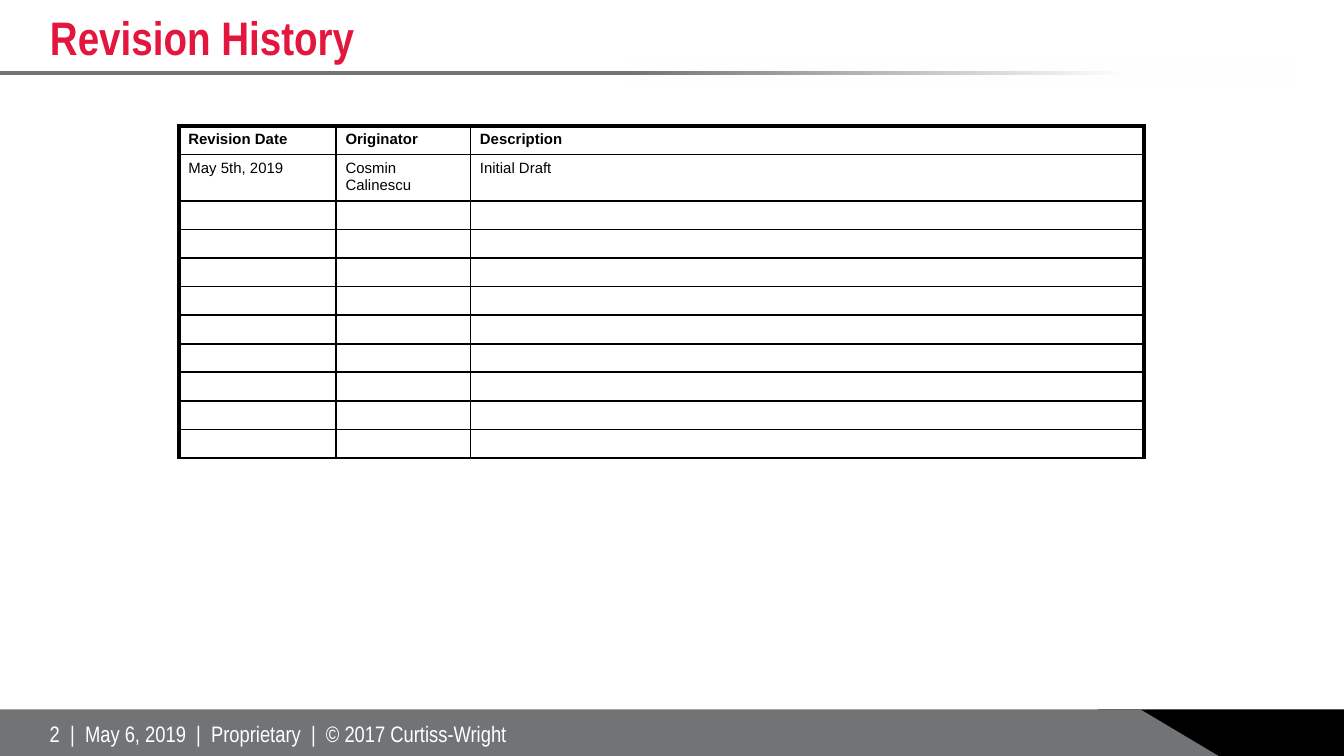
from lxml import etree
from pptx import Presentation
from pptx.dml.color import RGBColor
from pptx.enum.shapes import MSO_CONNECTOR, MSO_SHAPE
from pptx.enum.text import MSO_ANCHOR, PP_ALIGN
from pptx.oxml.ns import qn
from pptx.util import Cm, Pt

RECTANGLE = MSO_SHAPE.RECTANGLE
TRIANGLE = MSO_SHAPE.ISOSCELES_TRIANGLE
STRAIGHT = MSO_CONNECTOR.STRAIGHT
MIDDLE = MSO_ANCHOR.MIDDLE
TOP = MSO_ANCHOR.TOP
LEFT = PP_ALIGN.LEFT

RED = RGBColor(0xE3, 0x17, 0x3E)
GRAY = RGBColor(0x71, 0x73, 0x75)
BLACK = RGBColor(0, 0, 0)
WHITE = RGBColor(0xFF, 0xFF, 0xFF)


def add_block(preset, left, top, width, height, color):
    block = slide.shapes.add_shape(preset, Cm(left), Cm(top), Cm(width), Cm(height))
    block.shadow.inherit = False
    block.fill.solid()
    block.fill.fore_color.rgb = color
    block.line.fill.background()
    return block


def add_border(cell, side, points):
    """Draw a black line on one side of a cell: L, R, T or B."""
    line = etree.SubElement(cell._tc.get_or_add_tcPr(), qn(f"a:ln{side}"), w=str(Pt(points)))
    fill = etree.SubElement(line, qn("a:solidFill"))
    etree.SubElement(fill, qn("a:srgbClr"), val=str(BLACK))


prs = Presentation()
prs.slide_width, prs.slide_height = Cm(25.4), Cm(14.29)
slide = prs.slides.add_slide(prs.slide_layouts[5])

# Title
title = slide.shapes.title
title.left, title.top, title.width, title.height = Cm(0.69), Cm(0), Cm(24), Cm(1.4)
title.text_frame.text = "Revision History"
title.text_frame.vertical_anchor = MIDDLE
title_paragraph = title.text_frame.paragraphs[0]
title_paragraph.alignment = LEFT
title_font = title_paragraph.runs[0].font
title_font.name, title_font.size, title_font.bold = "Arial Narrow", Pt(25.2), True
title_font.color.rgb = RED

# Title rule, fading to white on the right
rule = slide.shapes.add_connector(STRAIGHT, Cm(0), Cm(1.38), Cm(24), Cm(1.38))
rule.line.color.rgb = GRAY
rule.line.width = Pt(2)
etree.SubElement(rule._element.spPr, qn("a:effectLst"))

fade = add_block(RECTANGLE, 11.91, 1.09, 12.6, 0.53, WHITE)
fade.fill.gradient()
fade.fill.gradient_angle = 180
for stop, position in zip(fade.fill.gradient_stops, (0.26, 1)):
    stop.color.rgb = WHITE
    stop.position = position
clear_color = fade._element.spPr.findall(".//" + qn("a:srgbClr"))[-1]
etree.SubElement(clear_color, qn("a:alpha"), val="0")

# Footer band
footer_top, footer_height = 13.41, 0.88
add_block(RECTANGLE, 20.75, footer_top, 4.65, footer_height, BLACK)
add_block(RECTANGLE, 0, footer_top, 21.56, footer_height, GRAY)
slant = add_block(TRIANGLE, 21.23, footer_top, 1.8, footer_height, GRAY)
slant.adjustments[0] = 0.18

footer = slide.shapes.add_textbox(Cm(0.69), Cm(13.49), Cm(10.52), Cm(0.76))
footer.text_frame.word_wrap = False
footer.text_frame.vertical_anchor = MIDDLE
footer.text_frame.text = "2  |  May 6, 2019  |  Proprietary  |  © 2017 Curtiss-Wright"
footer_paragraph = footer.text_frame.paragraphs[0]
footer_paragraph.alignment = LEFT
footer_font = footer_paragraph.runs[0].font
footer_font.name, footer_font.size = "Arial Narrow", Pt(12)
footer_font.color.rgb = WHITE

# Revision table
revisions = [
    ("Revision Date", "Originator", "Description"),
    ("May 5th, 2019", "Cosmin Calinescu", "Initial Draft"),
] + [("", "", "")] * 9
column_widths = (2.97, 2.54, 12.73)
row_height = 0.54

history = slide.shapes.add_table(
    len(revisions), len(column_widths),
    Cm(3.38), Cm(2.38), Cm(sum(column_widths)), Cm(row_height * len(revisions)),
).table
history.first_row = history.horz_banding = False
for column, width in zip(history.columns, column_widths):
    column.width = Cm(width)

last_column = len(column_widths) - 1
for r, revision in enumerate(revisions):
    history.rows[r].height = Cm(row_height)
    for c, entry in enumerate(revision):
        cell = history.cell(r, c)
        add_border(cell, "L", 2.25 if c == 0 else 1)
        add_border(cell, "R", 2.25 if c == last_column else 1)
        add_border(cell, "T", 2.25 if r == 0 else 1)
        add_border(cell, "B", 1)
        cell.fill.background()
        cell.margin_left = cell.margin_right = Cm(0.18)
        cell.margin_top = cell.margin_bottom = Cm(0.1)
        cell.vertical_anchor = TOP
        paragraph = cell.text_frame.paragraphs[0]
        if not entry:
            etree.SubElement(paragraph._p, qn("a:endParaRPr"), sz="800")
            continue
        paragraph.text = entry
        font = paragraph.runs[0].font
        font.name, font.size, font.bold = "Arial", Pt(8), r == 0
        font.color.rgb = BLACK

prs.save("out.pptx")
